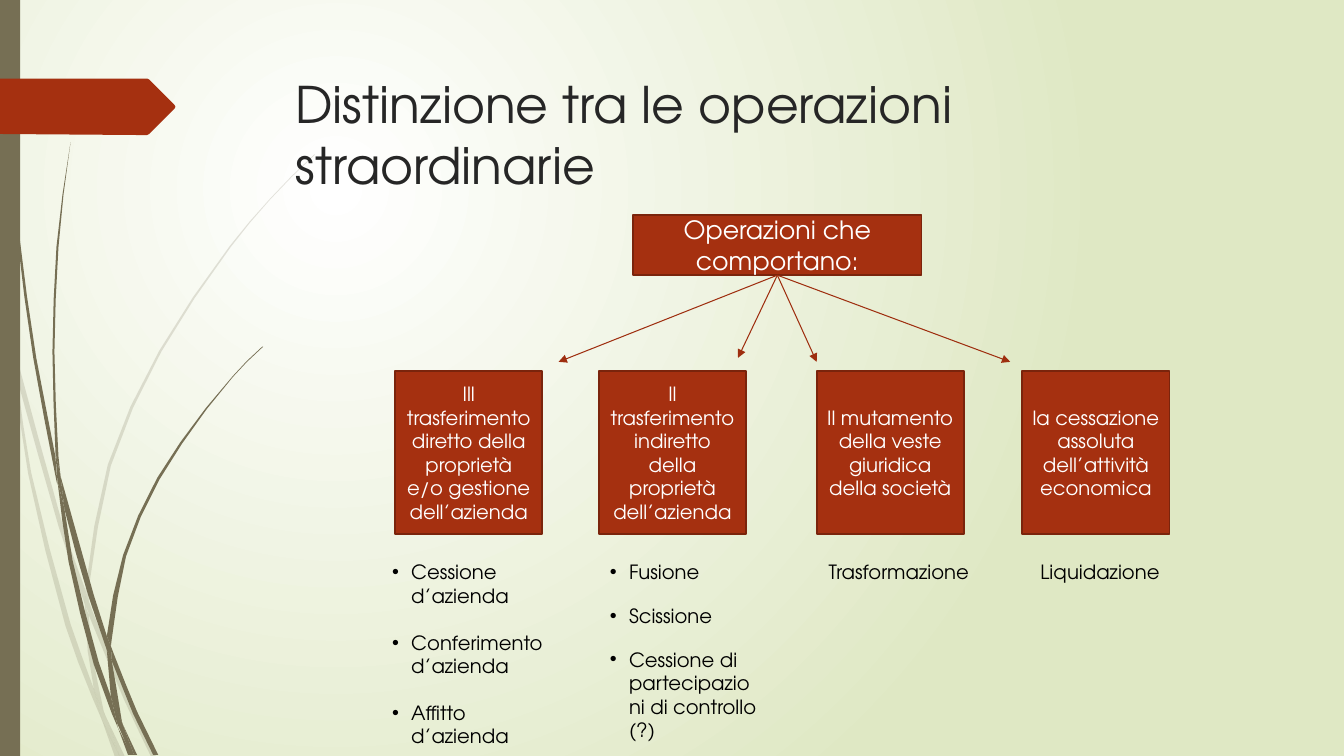
from dataclasses import dataclass
from math import dist

from lxml import etree
from pptx import Presentation
from pptx import util as u
from pptx.dml.color import RGBColor
from pptx.enum import shapes, text
from pptx.oxml.ns import qn

Point = tuple[float, float]


@dataclass(frozen=True)
class Theme:
    font: str = "TeX Gyre Adventor"
    white: str = "FFFFFF"
    black: str = "000000"
    dark: str = "262626"
    green: str = "DFE8C4"
    olive: str = "766F54"
    red: str = "A53010"
    edge: str = "7A240C"
    arrow: str = "9E2E0F"
    title: int = 36
    head: int = 18
    body: int = 14


@dataclass(frozen=True)
class Blade:
    """Two smooth edges that meet at the tips of a grass blade."""
    out: list[Point]
    back: list[Point]


@dataclass(frozen=True)
class Branch:
    left: float
    label: str
    note: tuple[float, float, float]  # left, width, height
    items: list[str]
    tip: Point
    gap: float = 0  # points between list items


T = Theme()

# Grass blades, pale ones behind
PALE = [
    Blade([(.11, 3.5), (.09, 3.22), (0, 2.82)], [(0, 2.99), (.1, 3.44)]),
    Blade([(.17, 3.76), (.58, 5.22), (.84, 5.99)], [(.85, 5.86), (.62, 5.2), (.14, 3.45)]),
    Blade([(.88, 6.1), (1.23, 6.94), (1.5, 7.51)],
          [(1.55, 7.51), (1.27, 6.92), (.92, 6.07), (.88, 5.96)]),
    Blade([(1.05, 7.11), (1.19, 7.51)], [(1.24, 7.51)]),
    Blade([(.11, 3.5), (.28, 4.7), (.65, 6.21), (.92, 6.93), (1.01, 7.14)],
          [(.99, 7.07), (.93, 6.83), (.7, 6.19), (.31, 4.69), (.17, 3.76)]),
    Blade([(.84, 5.99), (.87, 6.46), (.93, 6.83), (.96, 6.92), (1.05, 7.11)],
          [(1.03, 7.06), (.91, 6.46), (.88, 6.1)]),
    Blade([(.88, 5.84), (1.1, 4.62), (1.6, 3.49), (2.29, 2.45), (2.68, 1.98), (2.9, 1.75), (3.12, 1.54)],
          [(3.12, 1.53), (2.89, 1.75), (2.68, 1.97), (2.28, 2.44), (1.58, 3.48), (1.07, 4.61),
           (.85, 5.84), (.88, 5.96)]),
    Blade([(1.01, 7.14), (1.14, 7.51)], [(1.19, 7.51)]),
    Blade([(.88, 6.1), (.88, 5.96)], [(.85, 5.86), (.84, 5.99), (.88, 6.08)]),
    Blade([(.93, 6.83), (.99, 7.07), (1.01, 7.14), (1.19, 7.51)], [(1.05, 7.11), (.96, 6.92)]),
]
SOLID = [
    Blade([(.04, 0), (.08, 1.09), (.19, 2.32), (.36, 3.55), (.55, 4.53), (.57, 4.81)],
          [(.56, 4.77), (.33, 3.55), (.17, 2.33), (.07, 1.1), (.04, .48), (.03, 0)]),
    Blade([(.6, 4.72), (.64, 5.05), (.88, 5.92), (1.06, 6.45)], [(1.06, 6.31), (.93, 5.9)]),
    Blade([(1.1, 6.41), (1.11, 6.56), (1.32, 7.08), (1.52, 7.49)],
          [(1.57, 7.49), (1.36, 7.06), (1.13, 6.49)]),
    Blade([(.57, 4.77), (.68, 5.57), (.93, 6.59), (1.11, 7.08), (1.17, 7.22)],
          [(1.16, 7.17), (1.1, 6.91), (.98, 6.57), (.72, 5.56), (.64, 5.05)]),
    Blade([(.6, 4.72), (.58, 4.53), (.54, 3.49), (.58, 2.45), (.63, 1.93), (.7, 1.41)],
          [(.62, 1.93), (.56, 2.45), (.52, 3.49), (.55, 4.49)]),
    Blade([(1.22, 7.19), (1.33, 7.49)], [(1.36, 7.49)]),
    Blade([(.55, 4.49), (.57, 4.77), (.64, 5.05)], [(.6, 4.72)]),
    Blade([(1.11, 6.33), (1.25, 5.52), (1.58, 4.76), (2.05, 4.06), (2.31, 3.74), (2.45, 3.59), (2.61, 3.44)],
          [(2.6, 3.44), (2.45, 3.58), (2.31, 3.73), (2.04, 4.05), (1.56, 4.74), (1.22, 5.51),
           (1.06, 6.31), (1.1, 6.41)]),
    Blade([(1.17, 7.22), (1.27, 7.49)], [(1.31, 7.49)]),
    Blade([(1.06, 6.45), (1.1, 6.91), (1.16, 7.06), (1.22, 7.19)],
          [(1.21, 7.16), (1.11, 6.56), (1.09, 6.51)]),
    Blade([(1.06, 6.45), (1.11, 6.56)], [(1.1, 6.41), (1.06, 6.31)]),
    Blade([(1.1, 6.91), (1.16, 7.17), (1.3, 7.49)], [(1.33, 7.49), (1.22, 7.19)]),
]
FLAG = [(1.73, 1.08), (1.48, 1.33), (1.46, 1.34), (1.36, 1.34), (0, 1.33), (0, .78),
        (1.46, .78), (1.48, .79), (1.73, 1.04), (1.74, 1.06)]

# The four kinds of operation
ROOT = (7.71, 2.73)
BRANCHES = [
    Branch(3.92, "Ill trasferimento diretto della proprietà e/o gestione dell’azienda", (3.79, 1.76, 1.99),
           ["Cessione d’azienda", "Conferimento d’azienda", "Affitto d’azienda"], (5.54, 3.59), 16.5),
    Branch(5.94, "Il trasferimento indiretto della proprietà dell’azienda", (5.95, 1.69, 2.12),
           ["Fusione", "Scissione", "Cessione di partecipazioni di controllo (?)"], (7.32, 3.55), 14.3),
    Branch(8.1, "Il mutamento della veste giuridica della società", (8.12, 1.61, .34),
           ["Trasformazione"], (8.1, 3.59)),
    Branch(10.14, "la cessazione assoluta dell’attività economica", (10.22, 1.46, .34),
           ["Liquidazione"], (10.02, 3.59)),
]


def rgb(code: str) -> RGBColor:
    return RGBColor.from_string(code)


def smooth(pts: list[Point]) -> list[Point]:
    """Add a midpoint on the Hermite curve to each long stretch."""
    slopes = []
    for i in range(len(pts)):
        near = pts[max(i - 1, 0):i + 2]
        span = sum(dist(a, b) for a, b in zip(near, near[1:])) or 1
        slopes.append([(b - a) / span for a, b in zip(near[0], near[-1])])
    curve = [pts[0]]
    for p, q, m, n in zip(pts, pts[1:], slopes, slopes[1:]):
        size = dist(p, q)
        if size > .6:
            curve.append(tuple((p[j] + q[j]) / 2 + size * (m[j] - n[j]) / 8 for j in (0, 1)))
        curve.append(q)
    return curve


def paint(shape, fill: str, line: str = "") -> None:
    shape.shadow.inherit = False
    shape.fill.solid()
    shape.fill.fore_color.rgb = rgb(fill)
    if line:
        shape.line.color.rgb = rgb(line)
        shape.line.width = u.Pt(1.25)
    else:
        shape.line.fill.background()


def outline(home, pts: list[Point], fill: str, alpha: int = 100) -> None:
    spots = [(u.Inches(x), u.Inches(y)) for x, y in pts]
    pen = home.build_freeform(*spots[0], scale=1.0)
    pen.add_line_segments(spots[1:], close=True)
    shape = pen.convert_to_shape()
    paint(shape, fill)
    if alpha < 100:
        tint = shape._element.spPr.find(qn("a:solidFill"))[0]
        etree.SubElement(tint, qn("a:alpha"), val=str(alpha * 1000))


def write(shape, lines: list[str], size: int, ink: str, mid: bool = False, gap: float = 0) -> None:
    frame = shape.text_frame
    frame.word_wrap = True
    frame.vertical_anchor = text.MSO_ANCHOR.MIDDLE if mid else text.MSO_ANCHOR.TOP
    frame.text = "\n".join(lines)
    for i, para in enumerate(frame.paragraphs):
        para.alignment = text.PP_ALIGN.CENTER if mid else text.PP_ALIGN.LEFT
        if gap:
            props = para._p.get_or_add_pPr()
            props.set("marL", str(u.Inches(.19)))
            props.set("indent", str(-u.Inches(.19)))
            para.space_before = u.Pt(gap if i else 0)
            etree.SubElement(props, qn("a:buFont"), typeface="Arial")
            etree.SubElement(props, qn("a:buChar"), char="•")
        for run in para.runs:
            run.font.name, run.font.size = T.font, u.Pt(size)
            run.font.color.rgb = rgb(ink)


def card(slide, at: tuple[float, ...], label: str, size: int) -> None:
    shape = slide.shapes.add_shape(shapes.MSO_SHAPE.RECTANGLE, *map(u.Inches, at))
    paint(shape, T.red, T.edge)
    write(shape, [label], size, T.white, mid=True)


def arrow(slide, tip: Point) -> None:
    line = slide.shapes.add_connector(shapes.MSO_CONNECTOR.STRAIGHT, *map(u.Inches, ROOT + tip))
    line.line.color.rgb = rgb(T.arrow)
    line.line.width = u.Pt(.75)
    etree.SubElement(line.line._get_or_add_ln(), qn("a:tailEnd"), type="triangle")
    etree.SubElement(line._element.spPr, qn("a:effectLst"))


def backdrop(slide) -> None:
    fill = slide.background.fill
    fill.gradient()
    for stop, code in zip(fill.gradient_stops, (T.white, T.green)):
        stop.color.rgb = rgb(code)
    grad = slide._element.find(".//" + qn("a:gradFill"))
    grad.remove(grad.find(qn("a:lin")))
    glow = etree.SubElement(grad, qn("a:path"), path="circle")
    etree.SubElement(glow, qn("a:fillToRect"), l="50000", t="50000", r="100000", b="100000")


def main() -> None:
    deck = Presentation()
    deck.slide_width, deck.slide_height = u.Inches(13.33), u.Inches(7.5)
    slide = deck.slides.add_slide(deck.slide_layouts[6])

    # Backdrop, grass, side bar and flag
    backdrop(slide)
    for blades, alpha in ((PALE, 20), (SOLID, 100)):
        group = slide.shapes.add_group_shape()
        for blade in blades:
            outline(group.shapes, smooth(blade.out) + smooth(blade.back), T.olive, alpha)
    bar = slide.shapes.add_shape(shapes.MSO_SHAPE.RECTANGLE, *map(u.Inches, (0, 0, .2, 7.5)))
    paint(bar, T.olive)
    outline(slide.shapes, FLAG, T.red)

    # Title and root box
    title = slide.shapes.add_textbox(*map(u.Inches, (2.83, .68, 9.75, 1.4)))
    write(title, ["Distinzione tra le operazioni straordinarie"], T.title, T.dark)
    card(slide, (6.28, 2.13, 2.86, .6), "Operazioni che comportano:", T.head)

    # Branches with their notes and arrows
    for item in BRANCHES:
        card(slide, (item.left, 3.68, 1.46, 1.62), item.label, T.body)
        left, width, height = item.note
        note = slide.shapes.add_textbox(*map(u.Inches, (left, 5.51, width, height)))
        write(note, item.items, T.body, T.black, gap=item.gap)
    for item in BRANCHES:
        arrow(slide, item.tip)

    deck.save("out.pptx")


if __name__ == "__main__":
    main()
